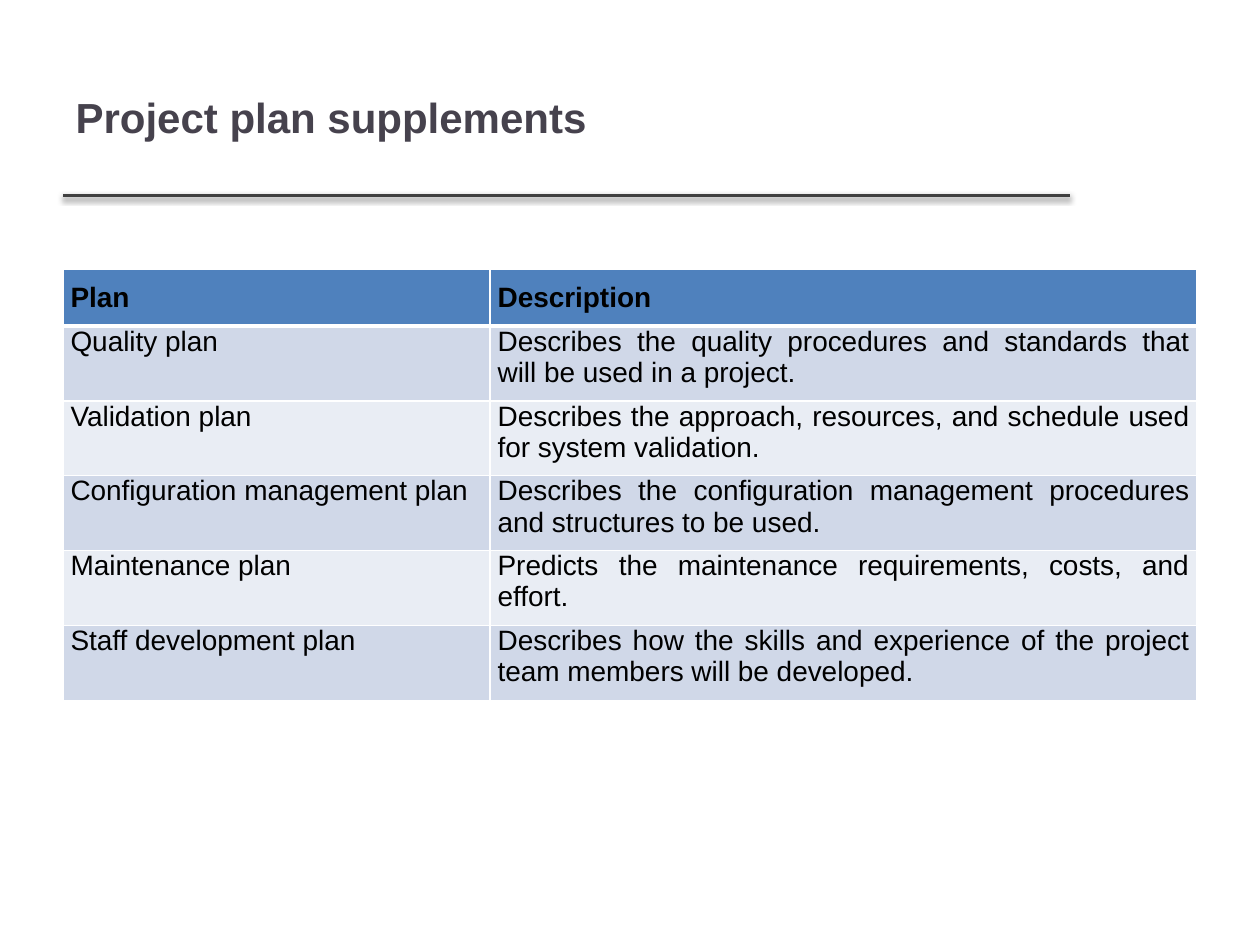
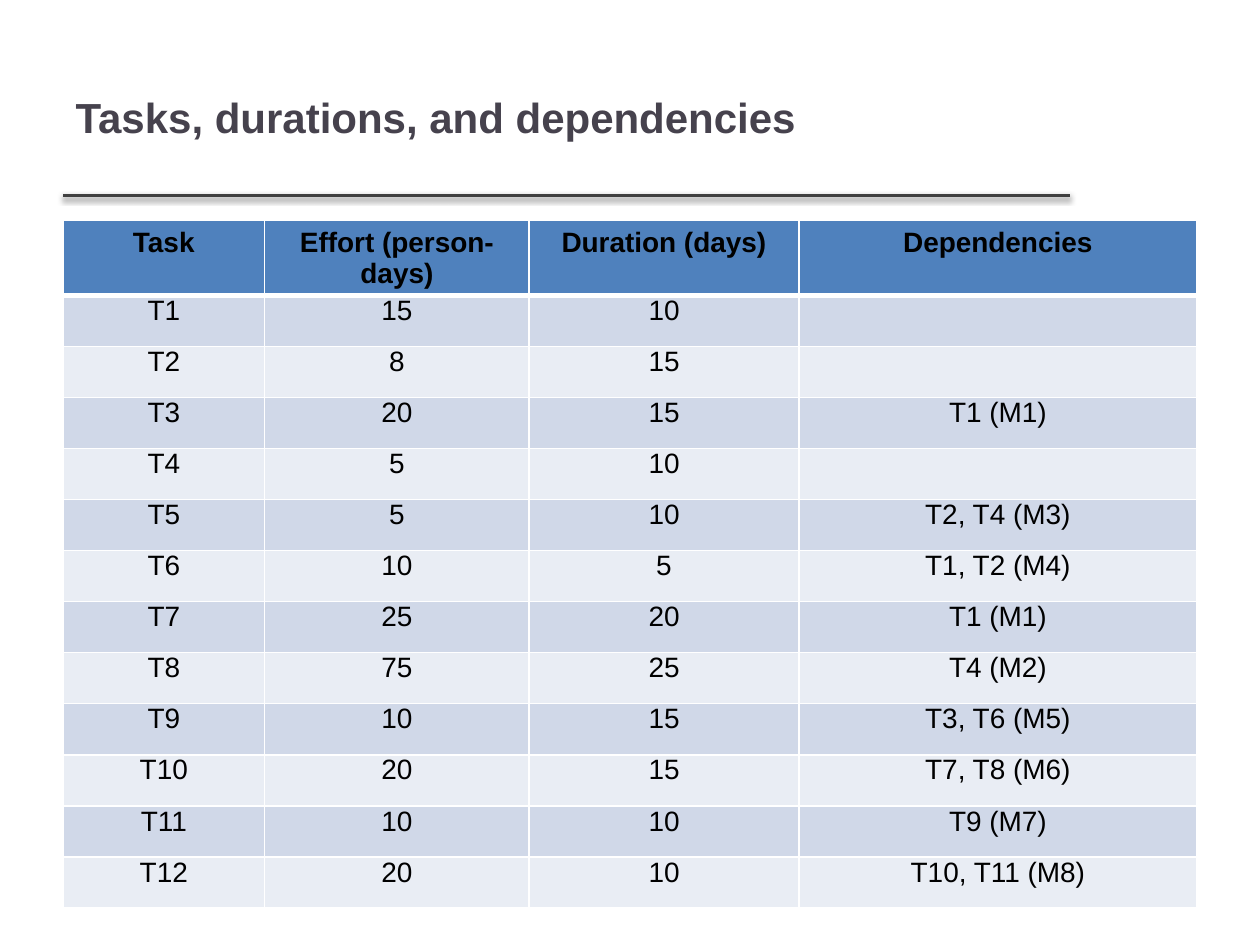
from lxml import etree
from pptx import Presentation
from pptx import util as u
from pptx.dml.color import RGBColor
from pptx.enum import shapes, text
from pptx.oxml import parse_xml
from pptx.oxml.ns import nsdecls, qn

LEFT, CENTER, JUSTIFY = (text.PP_ALIGN.LEFT, text.PP_ALIGN.CENTER,
                         text.PP_ALIGN.JUSTIFY)


def rgb(hex_string):
    return RGBColor.from_string(hex_string)


class Deck:
    """Holds the shared style and the slide being built."""
    FONT = "Arial"
    TITLE, RULE, TEXT, GRID = "46424D", "404040", "000000", "FFFFFF"
    HEADER, BANDS = "4F81BD", ("D0D8E8", "E9EDF4")
    MARGIN = 0.5

    def __init__(self):
        self.prs = Presentation()
        self.prs.slide_width = u.Inches(10)
        self.prs.slide_height = u.Inches(7.5)
        self.slide = None

    def format_font(self, font, size, color, bold):
        values = {"name": self.FONT, "size": u.Pt(size), "bold": bold}
        for attribute, value in values.items():
            setattr(font, attribute, value)
        font.color.rgb = rgb(color)

    def add_slide(self, heading):
        self.slide = self.prs.slides.add_slide(self.prs.slide_layouts[5])
        self.add_title(heading)
        self.add_rule()

    def add_title(self, heading):
        title = self.slide.shapes.title
        place = {"left": self.MARGIN, "top": 0.3, "width": 7.98, "height": 1.25}
        for attribute, value in place.items():
            setattr(title, attribute, u.Inches(value))
        title.text_frame.vertical_anchor = text.MSO_ANCHOR.MIDDLE
        paragraph = title.text_frame.paragraphs[0]
        paragraph.alignment = LEFT
        run = paragraph.add_run()
        run.text = heading
        self.format_font(run.font, 24, self.TITLE, True)

    def add_rule(self):
        """Line under the title, with a soft shadow below it."""
        y = u.Inches(1.55)
        rule = self.slide.shapes.add_connector(
            shapes.MSO_CONNECTOR.STRAIGHT,
            u.Inches(self.MARGIN), y, u.Inches(8.49), y)
        rule.line.color.rgb = rgb(self.RULE)
        rule.line.width = u.Pt(2)
        rule._element.spPr.append(parse_xml(
            f'<a:effectLst {nsdecls("a")}>'
            f'<a:outerShdw blurRad="{u.Pt(3.1)}" dist="{u.Pt(1.6)}" '
            'dir="5400000" rotWithShape="0"><a:srgbClr val="000000">'
            '<a:alpha val="38000"/></a:srgbClr></a:outerShdw></a:effectLst>'))

    def add_borders(self, cell, row):
        """White grid, heavier between the header and the body."""
        heavy = {0: "lnB", 1: "lnT"}.get(row)
        properties = cell._tc.get_or_add_tcPr()
        for side in ("lnL", "lnR", "lnT", "lnB"):
            width = u.Pt(3 if side == heavy else 1)
            line = etree.SubElement(properties, qn(f"a:{side}"), w=str(width))
            fill = etree.SubElement(line, qn("a:solidFill"))
            etree.SubElement(fill, qn("a:srgbClr"), val=self.GRID)

    def add_table(self, top, height, widths, rows, header_align, body_aligns,
                  padding):
        table = self.slide.shapes.add_table(
            len(rows), len(widths), u.Inches(self.MARGIN), u.Inches(top),
            u.Inches(sum(widths)), u.Inches(height)).table
        for column, width in zip(table.columns, widths):
            column.width = u.Inches(width)
        for r, values in enumerate(rows):
            is_header = r == 0
            for c, value in enumerate(values):
                cell = table.cell(r, c)
                margins = {"left": 0.06, "right": 0.06, "bottom": padding,
                           "top": padding if is_header else 0}
                for side, margin in margins.items():
                    setattr(cell, f"margin_{side}", u.Inches(margin))
                self.add_borders(cell, r)
                cell.fill.solid()
                cell.fill.fore_color.rgb = rgb(
                    self.HEADER if is_header else self.BANDS[(r - 1) % 2])
                if not value:
                    continue
                paragraph = cell.text_frame.paragraphs[0]
                paragraph.alignment = (header_align if is_header
                                       else body_aligns[c])
                run = paragraph.add_run()
                run.text = str(value)
                self.format_font(run.font, 16, self.TEXT, is_header)


PLANS = [
    ("Plan", "Description"),
    ("Quality plan", "Describes the quality procedures and standards that "
     "will be used in a project."),
    ("Validation plan", "Describes the approach, resources, and schedule used "
     "for system validation."),
    ("Configuration management plan", "Describes the configuration management "
     "procedures and structures to be used."),
    ("Maintenance plan",
     "Predicts the maintenance requirements, costs, and effort."),
    ("Staff development plan", "Describes how the skills and experience of "
     "the project team members will be developed."),
]

TASKS = [
    ("Task", "Effort (person-days)", "Duration (days)", "Dependencies"),
    ("T1", 15, 10, ""),
    ("T2", 8, 15, ""),
    ("T3", 20, 15, "T1 (M1)"),
    ("T4", 5, 10, ""),
    ("T5", 5, 10, "T2, T4 (M3)"),
    ("T6", 10, 5, "T1, T2 (M4)"),
    ("T7", 25, 20, "T1 (M1)"),
    ("T8", 75, 25, "T4 (M2)"),
    ("T9", 10, 15, "T3, T6 (M5)"),
    ("T10", 20, 15, "T7, T8 (M6)"),
    ("T11", 10, 10, "T9 (M7)"),
    ("T12", 20, 10, "T10, T11 (M8)"),
]


def main():
    deck = Deck()

    # Supplementary plans
    deck.add_slide("Project plan supplements")
    deck.add_table(2.14, 2.43, (3.39, 5.61), PLANS, JUSTIFY, (LEFT, JUSTIFY),
                   padding=0.1)

    # Task schedule
    deck.add_slide("Tasks, durations, and dependencies")
    deck.add_table(1.75, 5.27, (1.6, 2.1, 2.14, 3.16), TASKS, CENTER,
                   (CENTER,) * 4, padding=0.05)

    deck.prs.save("out.pptx")


if __name__ == "__main__":
    main()
